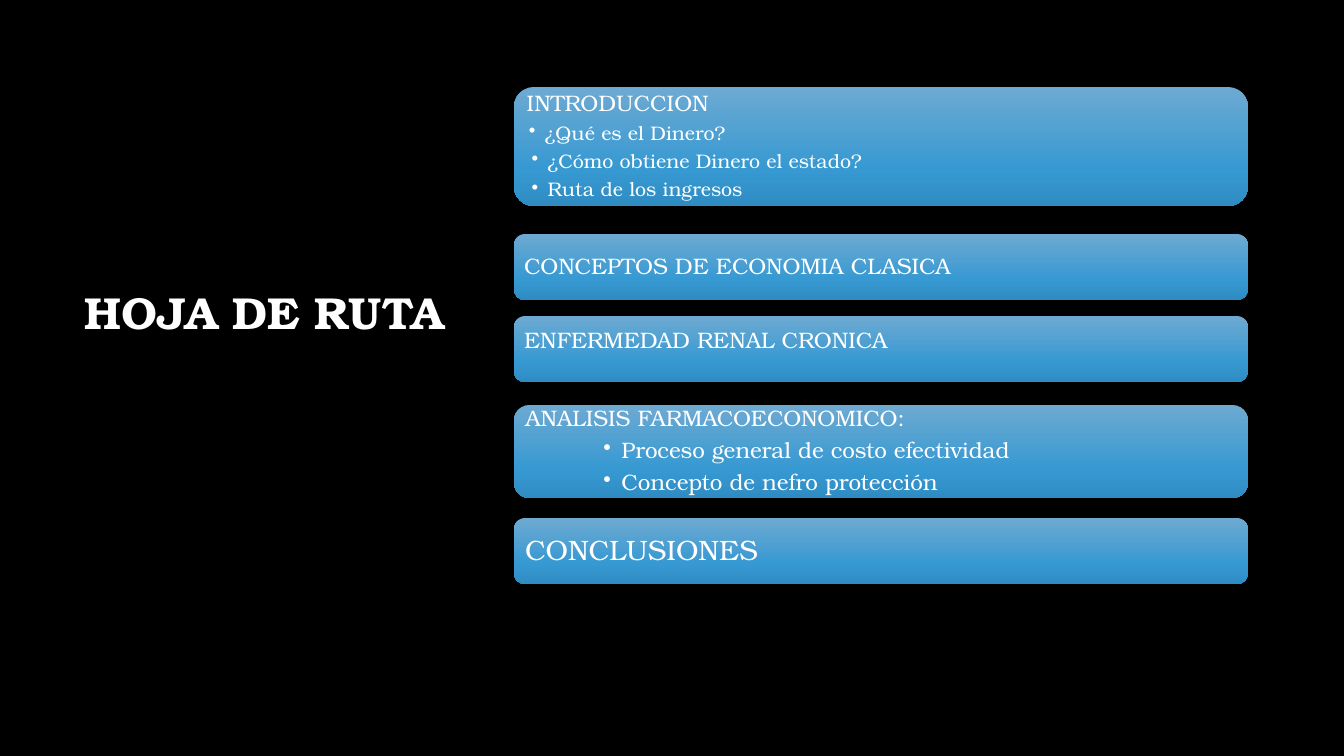
from copy import deepcopy
from dataclasses import dataclass

from pptx import Presentation
from pptx.dml.color import RGBColor
from pptx.enum.shapes import MSO_SHAPE as Shape
from pptx.enum.text import MSO_ANCHOR as Anchor, PP_ALIGN as Align
from pptx.oxml import parse_xml
from pptx.oxml.ns import nsdecls, qn
from pptx.util import Emu, Pt

FONT = "TeX Gyre Bonum"
WHITE = "FFFFFF"
STOPS = [(0, "6DAAD2"), (0.69, "3799D2"), (1, "2F8CC2")]
LEFT, WIDTH = 514, 734


@dataclass
class Line:
    text: str
    size: int = 16
    margin: int = 0
    hang: int = 0


@dataclass
class Step:
    top: int
    height: int
    lines: list[Line]
    inset: int = 7
    lift: int = 0


STEPS = [
    Step(87, 119, [
        Line("INTRODUCCION"),
        Line("¿Qué es el Dinero?", 14, 18, 16),
        Line("¿Cómo obtiene Dinero el estado?", 14, 21, 16),
        Line("Ruta de los ingresos", 14, 21, 16),
    ]),
    Step(234, 66, [Line("CONCEPTOS DE ECONOMIA CLASICA")]),
    Step(316, 66, [Line("ENFERMEDAD RENAL CRONICA")], lift=16),
    Step(405, 93, [
        Line("ANALISIS FARMACOECONOMICO:"),
        Line("Proceso general de costo efectividad", 16, 96, 18),
        Line("Concepto de nefro protección", 16, 96, 18),
    ]),
    Step(518, 66, [Line("CONCLUSIONES", 20)], inset=8),
]


def px(count: int) -> Emu:
    """Turn pixels into EMU."""
    return Emu(round(count * 914400 / 100.8))


def tint(code: str) -> RGBColor:
    """Turn a hex string into a colour."""
    return RGBColor.from_string(code)


def style(para, size: int, align: Align, bold: bool = False) -> None:
    """Set the font, alignment and line spacing of a paragraph."""
    font = para.font
    font.name, font.size, font.bold = FONT, Pt(size), bold
    font.color.rgb = tint(WHITE)
    para.alignment = align
    para.line_spacing = 0.9


def shade(box) -> None:
    """Fill a box with the blue gradient from top to bottom."""
    fill = box.fill
    fill.gradient()
    fill.gradient_angle = 270
    first = next(box._element.spPr.iter(qn("a:gs")))
    first.addnext(deepcopy(first))
    for stop, (place, code) in zip(fill.gradient_stops, STOPS):
        stop.position = place
        stop.color.rgb = tint(code)


def bullet(para, line: Line) -> None:
    """Give a paragraph a hanging bullet."""
    props = para._p.get_or_add_pPr()
    props.set("marL", str(px(line.margin)))
    props.set("indent", str(-px(line.hang)))
    mark = parse_xml(f'<a:buChar {nsdecls("a")} char="•"/>')
    props.find(qn("a:defRPr")).addprevious(mark)


def draw_step(slide, step: Step) -> None:
    """Draw one step of the route with its lines."""
    box = slide.shapes.add_shape(Shape.ROUNDED_RECTANGLE, px(LEFT), px(step.top),
                                 px(WIDTH), px(step.height))
    box.shadow.inherit = False
    box.line.fill.background()
    shade(box)
    frame = box.text_frame
    frame.word_wrap = True
    frame.vertical_anchor = Anchor.MIDDLE
    frame.margin_left = frame.margin_right = frame.margin_top = px(step.inset)
    frame.margin_bottom = px(step.inset + step.lift)
    for rank, line in enumerate(step.lines):
        para = frame.add_paragraph() if rank else frame.paragraphs[0]
        para.text = line.text
        style(para, line.size, Align.LEFT)
        para.space_after = Pt(line.size * 0.35)
        if line.hang:
            bullet(para, line)


def draw_title(slide, text: str) -> None:
    """Draw the slide title."""
    frame = slide.shapes.add_textbox(px(48), px(286), px(433), px(92)).text_frame
    frame.word_wrap = True
    para = frame.paragraphs[0]
    para.text = text
    style(para, 32, Align.CENTER, True)


def main() -> None:
    """Build the slide and save it."""
    deck = Presentation()
    deck.slide_width, deck.slide_height = px(1344), px(756)
    slide = deck.slides.add_slide(deck.slide_layouts[6])
    back = slide.background.fill
    back.solid()
    back.fore_color.rgb = tint("000000")
    draw_title(slide, "HOJA DE RUTA")
    for step in STEPS:
        draw_step(slide, step)
    deck.save("out.pptx")


if __name__ == "__main__":
    main()
